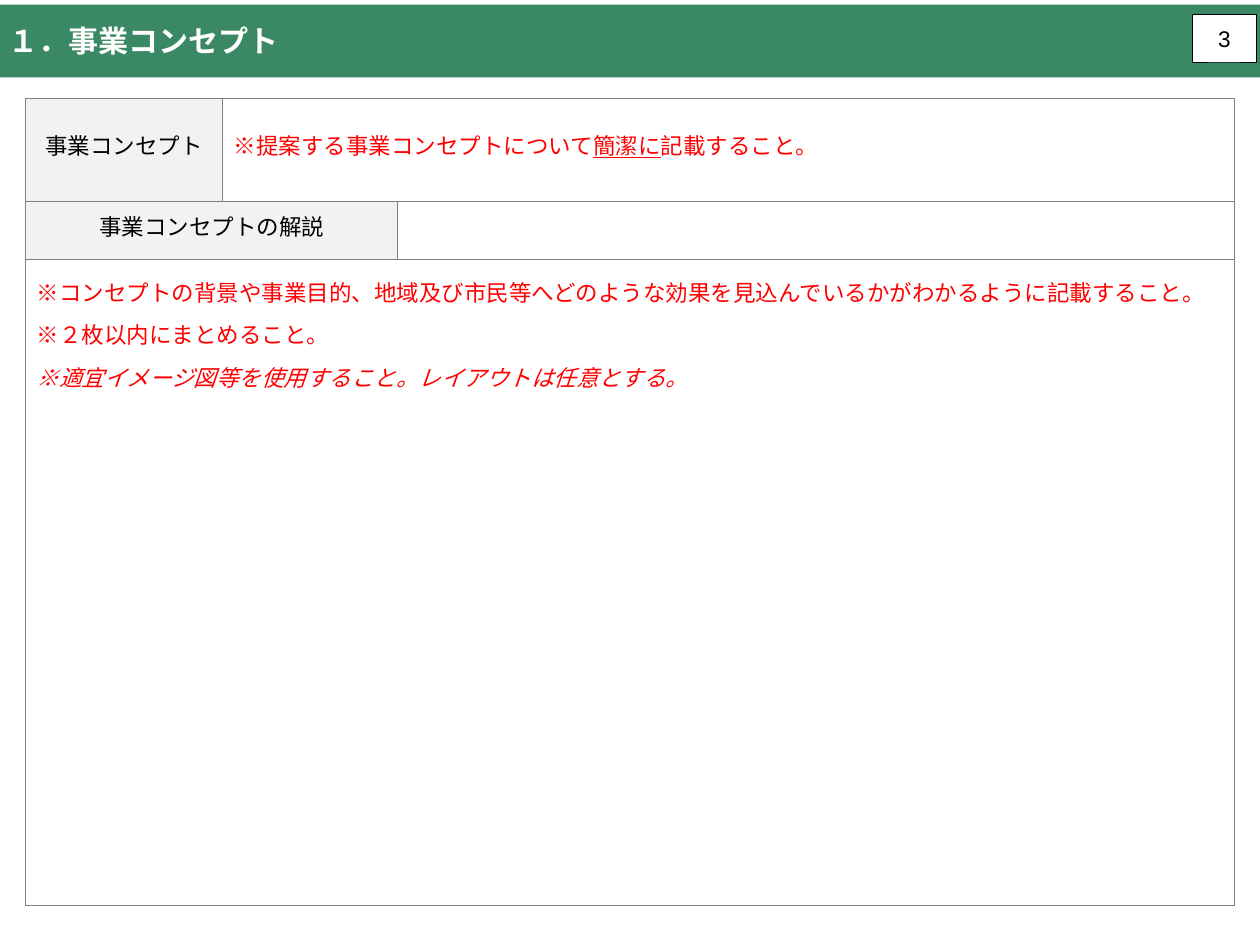
from lxml import etree
from pptx import Presentation
from pptx.dml.color import RGBColor
from pptx.enum.shapes import MSO_SHAPE
from pptx.enum.text import MSO_ANCHOR, PP_ALIGN
from pptx.oxml.ns import qn
from pptx.util import Inches, Pt

RECTANGLE = MSO_SHAPE.RECTANGLE
MIDDLE, TOP = MSO_ANCHOR.MIDDLE, MSO_ANCHOR.TOP
LEFT, CENTER = PP_ALIGN.LEFT, PP_ALIGN.CENTER
GREEN = RGBColor(0x3B, 0x89, 0x64)
WHITE = RGBColor(0xFF, 0xFF, 0xFF)
BLACK = RGBColor(0x00, 0x00, 0x00)
RED = RGBColor(0xFF, 0x00, 0x00)
GRAY = RGBColor(0x80, 0x80, 0x80)
LIGHT_GRAY = RGBColor(0xF2, 0xF2, 0xF2)
JAPANESE_FONT = "Noto Sans CJK JP"
NUMBER_FONT = "Arial"


def format_run(run, size, color, font_name=JAPANESE_FONT):
    run.font.size = Pt(size)
    run.font.color.rgb = color
    run.font.name = font_name
    east_asian = etree.SubElement(run.font._element, qn("a:ea"))
    east_asian.set("typeface", font_name)


def add_label_box(slide, box, text, fill, size, color, font_name, alignment):
    shape = slide.shapes.add_shape(RECTANGLE, *map(Inches, box))
    shape.shadow.inherit = False
    shape.fill.solid()
    shape.fill.fore_color.rgb = fill
    shape.line.fill.background()
    text_frame = shape.text_frame
    text_frame.text = text
    text_frame.vertical_anchor = MIDDLE
    paragraph = text_frame.paragraphs[0]
    paragraph.alignment = alignment
    format_run(paragraph.runs[0], size, color, font_name)
    return shape


def add_title_bar(slide, box):
    bar = add_label_box(slide, box, "１．事業コンセプト", GREEN, 24, WHITE, JAPANESE_FONT, LEFT)
    bar.text_frame.paragraphs[0].runs[0].font.bold = True


def add_page_number(slide, box):
    number = add_label_box(slide, box, "3", WHITE, 18.1, BLACK, NUMBER_FONT, CENTER)
    number.line.color.rgb = BLACK
    number.line.width = Pt(0.75)


def set_borders(cell):
    properties = cell._tc.get_or_add_tcPr()
    for side in ("a:lnL", "a:lnR", "a:lnT", "a:lnB"):
        line = etree.SubElement(properties, qn(side), w=str(Pt(0.5)))
        fill = etree.SubElement(line, qn("a:solidFill"))
        etree.SubElement(fill, qn("a:srgbClr"), val=str(GRAY))


def fill_cell(cell, paragraphs, color, line_spacing, alignment=LEFT, fill=None, anchor=MIDDLE):
    cell.vertical_anchor = anchor
    cell.margin_left = cell.margin_right = Inches(0.13)
    cell.margin_top = cell.margin_bottom = Inches(0.06)
    if fill is not None:
        cell.fill.solid()
        cell.fill.fore_color.rgb = fill
    for index, texts in enumerate(paragraphs):
        if index == 0:
            paragraph = cell.text_frame.paragraphs[0]
        else:
            paragraph = cell.text_frame.add_paragraph()
            paragraph.space_before = Pt(line_spacing)
        paragraph.alignment = alignment
        paragraph.line_spacing = Pt(line_spacing)
        for text in texts:
            run = paragraph.add_run()
            run.text = text
            format_run(run, 18, color)


def add_concept_table(slide, box):
    widths = (2.19, 1.95, 9.29)
    heights = (1.15, 0.64, 7.18)
    table = slide.shapes.add_table(len(heights), len(widths), *map(Inches, box)).table
    table.first_row = False
    table.horz_banding = False
    for column, width in zip(table.columns, widths):
        column.width = Inches(width)
    for row, height in zip(table.rows, heights):
        row.height = Inches(height)
    for cell in table.iter_cells():
        set_borders(cell)
        cell.fill.background()

    concept_label, concept = table.cell(0, 0), table.cell(0, 1)
    explanation_label, explanation = table.cell(1, 0), table.cell(2, 0)
    concept.merge(table.cell(0, 2))
    explanation_label.merge(table.cell(1, 1))
    explanation.merge(table.cell(2, 2))

    fill_cell(concept_label, [["事業コンセプト"]], BLACK, 18, CENTER, LIGHT_GRAY)
    concept_texts = ["※提案する事業コンセプトについて", "簡潔に", "記載すること。"]
    fill_cell(concept, [concept_texts], RED, 17)
    concept.text_frame.paragraphs[0].runs[1].font.underline = True
    fill_cell(explanation_label, [["事業コンセプトの解説"]], BLACK, 18, CENTER, LIGHT_GRAY)
    notes = [
        ["※コンセプトの背景や事業目的、地域及び市民等へどのような効果を見込んでいるかがわかるように記載すること。"],
        ["※２枚以内にまとめること。"],
        ["※適宜イメージ図等を使用すること。レイアウトは任意とする。"],
    ]
    fill_cell(explanation, notes, RED, 17, fill=WHITE, anchor=TOP)
    explanation.margin_top = Inches(0.3)
    explanation.text_frame.paragraphs[-1].runs[0].font.italic = True


def main():
    presentation = Presentation()
    presentation.slide_width = Inches(14)
    presentation.slide_height = Inches(10.5)
    slide = presentation.slides.add_slide(presentation.slide_layouts[6])
    add_title_bar(slide, (0, 0.05, 14, 0.81))
    add_page_number(slide, (13.25, 0.16, 0.71, 0.53))
    add_concept_table(slide, (0.28, 1.09, 13.43, 8.97))
    presentation.save("out.pptx")


if __name__ == "__main__":
    main()
